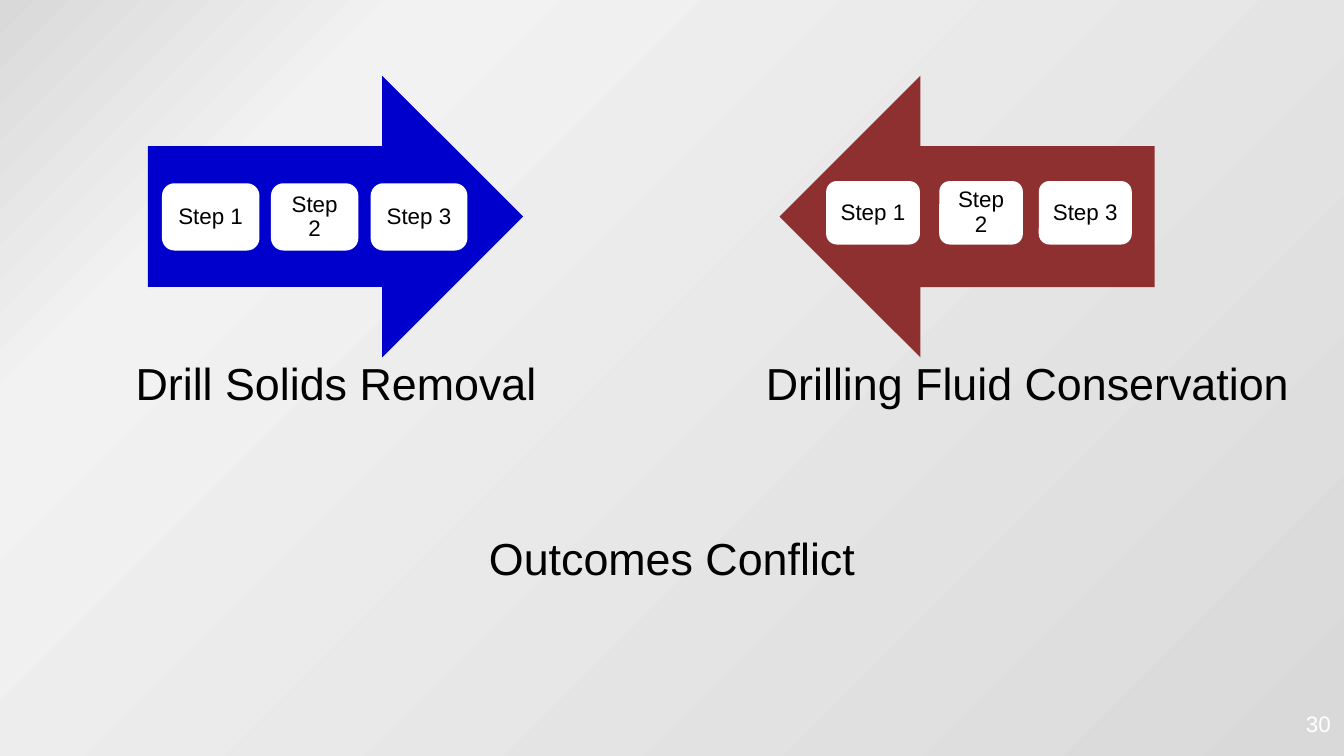
from copy import deepcopy
from dataclasses import dataclass

from pptx import Presentation
from pptx.dml.color import RGBColor as Rgb
from pptx.enum.shapes import MSO_SHAPE as Shape
from pptx.enum.text import MSO_ANCHOR as Anchor, PP_ALIGN as Align
from pptx.oxml.ns import qn
from pptx.util import Pt


@dataclass(frozen=True)
class Theme:
    font: str = "Arial"
    large: float = 24
    small: float = 12
    ink: str = "000000"
    white: str = "FFFFFF"
    blue: str = "0000CC"
    red: str = "8F3030"
    wash: tuple = ((0, "D9D9D9"), (0.2, "F2F2F2"), (1, "D9D9D9"))


THEME = Theme()
STEPS = (("Step 1", 50.2), ("Step 2", 44.8), ("Step 3", 49.8))


def paint_back(slide):
    fill = slide.background.fill
    fill.gradient()
    fill.gradient_angle = 315
    stops = next(slide.element.iter(qn("a:gsLst")))
    stops.insert(1, deepcopy(stops[0]))
    for stop, (place, color) in zip(fill.gradient_stops, THEME.wash):
        stop.position = place
        stop.color.rgb = Rgb.from_string(color)


def write(shape, text, size, align, color=THEME.ink, pad=(7.2, 3.6),
          anchor=Anchor.MIDDLE, pitch=1.0):
    frame = shape.text_frame
    frame.word_wrap = True
    frame.vertical_anchor = anchor
    frame.margin_left = frame.margin_right = Pt(pad[0])
    frame.margin_top = frame.margin_bottom = Pt(pad[1])
    para = frame.paragraphs[0]
    para.alignment = align
    para.line_spacing = pitch
    run = para.add_run()
    run.text = text
    run.font.name = THEME.font
    run.font.size = Pt(size)
    run.font.color.rgb = Rgb.from_string(color)


def add_label(slide, box, text, size, align, **style):
    label = slide.shapes.add_textbox(*map(Pt, box))
    write(label, text, size, align, **style)


def add_solid(slide, kind, box, color, edge=0):
    shape = slide.shapes.add_shape(kind, *map(Pt, box))
    shape.shadow.inherit = False
    shape.fill.solid()
    shape.fill.fore_color.rgb = Rgb.from_string(color)
    if edge:
        shape.line.color.rgb = Rgb.from_string(color)
        shape.line.width = Pt(edge)
    else:
        shape.line.fill.background()
    return shape


def add_flow(slide, box, color, starts, drop, turn=0, edge=0):
    left, top, _, _ = box
    arrow = add_solid(slide, Shape.RIGHT_ARROW, box, color)
    arrow.rotation = turn
    for (text, width), start in zip(STEPS, starts):
        card = add_solid(slide, Shape.ROUNDED_RECTANGLE,
                         (left + start, top + drop, width, 34),
                         THEME.white, edge)
        write(card, text, THEME.small, Align.CENTER,
              pad=(4.3, 4.3), pitch=0.9)


def build():
    deck = Presentation()
    deck.slide_width, deck.slide_height = Pt(720), Pt(405)
    slide = deck.slides.add_slide(deck.slide_layouts[6])
    paint_back(slide)
    add_label(slide, (552, 376.6, 168, 21.6), "30", THEME.small,
              Align.RIGHT, color=THEME.white)
    add_label(slide, (0, 223.2, 720, 147), "Outcomes Conflict", THEME.large,
              Align.CENTER, pad=(43.2, 14.4), pitch=1.14)
    add_flow(slide, (79.2, 40.5, 201, 151), THEME.blue,
             (8.6, 67, 120.4), 58.7, edge=2)
    add_flow(slide, (417.6, 40.5, 201, 151), THEME.red,
             (25, 85.6, 138.9), 56.5, turn=180)
    add_label(slide, (0, 187.2, 360, 36), "Drill Solids Removal",
              THEME.large, Align.CENTER, anchor=Anchor.TOP)
    add_label(slide, (403.2, 187.2, 298.8, 36), "Drilling Fluid Conservation",
              THEME.large, Align.LEFT, anchor=Anchor.TOP)
    deck.save("out.pptx")


if __name__ == "__main__":
    build()
